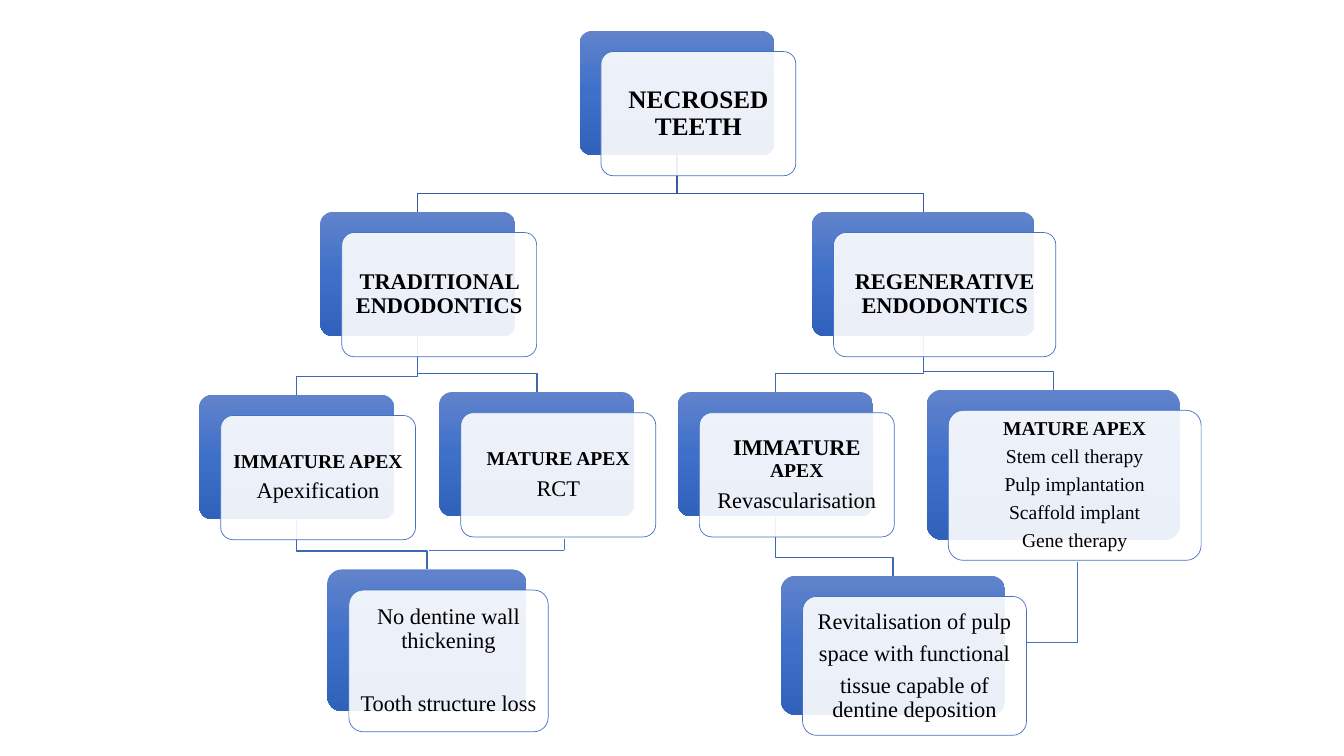
from copy import deepcopy

from lxml import etree
from pptx import Presentation
from pptx import util as u
from pptx.dml import color
from pptx.enum import shapes, text
from pptx.oxml import ns

COLOURS = {
    "top": "6183CB", "middle": "3E70CA", "bottom": "3062BB",
    "card": "FFFFFF", "outline": "4472C4", "ink": "000000",
    "root_link": "365B9D", "link": "3E67B2",
}
FONT = "Times New Roman"
SHIFT_X, SHIFT_Y = 0.54, 0.52  # front card relative to its backing, cm
BEND = 0.46                    # height of a link's last segment, cm

# Each node: left, top, width, height in cm, then paragraphs.
# Each paragraph: bold, space before in pt, runs of (wording, size).
NODES = {
    "necrosed": (14.6, 0.78, 4.91, 3.13, [(True, 0, [("NECROSED TEETH", 18)])]),
    "traditional": (8.07, 5.34, 4.91, 3.13, [(True, 0, [("TRADITIONAL ENDODONTICS", 16)])]),
    "apexification": (5.02, 9.95, 4.91, 3.13, [
        (True, 0, [("IMMATURE APEX", 14)]),
        (False, 0, [("Apexification", 16)])]),
    "drawbacks": (8.25, 14.35, 5.02, 3.57, [
        (False, 0, [("No dentine wall thickening", 16)]),
        (False, 22.5, [("Tooth structure loss", 16)])]),
    "rct": (11.07, 9.88, 4.91, 3.13, [
        (True, 0, [("MATURE APEX", 14)]),
        (False, 0, [("RCT", 16)])]),
    "regenerative": (20.46, 5.34, 5.6, 3.13, [(True, 0, [("REGENERATIVE ENDODONTICS", 16)])]),
    "revascularisation": (17.08, 9.88, 4.91, 3.13, [
        (True, 0, [("IMMATURE ", 16), ("APEX", 14)]),
        (False, 0, [("Revascularisation", 16)])]),
    "revitalisation": (19.68, 14.51, 5.64, 3.5, [
        (False, 0, [("Revitalisation of pulp", 16)]),
        (False, 0, [("space with functional", 16)]),
        (False, 0, [("tissue capable of dentine deposition", 16)])]),
    "therapies": (23.35, 9.82, 6.37, 3.78, [
        (True, 0, [("MATURE APEX", 14)]),
        (False, 0, [("Stem cell therapy", 14)]),
        (False, 0, [("Pulp implantation", 14)]),
        (False, 0, [("Scaffold implant", 14)]),
        (False, 0, [("Gene therapy", 14)])]),
}
LINKS = [
    ("regenerative", "therapies"), ("revascularisation", "revitalisation"),
    ("regenerative", "revascularisation"), ("necrosed", "regenerative"),
    ("traditional", "rct"), ("apexification", "drawbacks"),
    ("traditional", "apexification"), ("necrosed", "traditional"),
]
SIDE_LINES = [
    (10.8, 13.87, 14.22, 13.87), (14.22, 13.87, 14.22, 13.59),
    (27.15, 14.17, 27.15, 16.18), (25.88, 16.18, 27.15, 16.18),
]


def rgb(name):
    return color.RGBColor.from_string(COLOURS[name])


def add_card(left, top, width, height):
    card = page.shapes.add_shape(shapes.MSO_SHAPE.ROUNDED_RECTANGLE,
                                 u.Cm(left), u.Cm(top), u.Cm(width), u.Cm(height))
    card.adjustments[0] = 0.1
    card.shadow.inherit = False
    return card


deck = Presentation()
deck.slide_width, deck.slide_height = u.Inches(13.33), u.Inches(7.5)
page = deck.slides.add_slide(deck.slide_layouts[6])

# Links of the tree, behind the cards
for parent, child in LINKS:
    left, top, width, height, _ = NODES[parent]
    start_x, start_y = left + width / 2, top + height
    left, top, width, height, _ = NODES[child]
    end_x, end_y = left + width / 2, top
    corners = [(start_x, end_y - BEND), (end_x, end_y - BEND), (end_x, end_y)]
    builder = page.shapes.build_freeform(u.Cm(start_x), u.Cm(start_y))
    builder.add_line_segments([(u.Cm(x), u.Cm(y)) for x, y in corners], close=False)
    link = builder.convert_to_shape()
    link.shadow.inherit = False
    link.fill.background()
    link.line.color.rgb = rgb("root_link" if parent == "necrosed" else "link")
    link.line.width = u.Pt(1)

# Nodes: a gradient backing and a translucent card with the wording
for left, top, width, height, paragraphs in NODES.values():
    backing = add_card(left, top, width, height)
    backing.line.fill.background()
    backing.fill.gradient()
    backing.fill.gradient_angle = 270
    first, last = backing.fill.gradient_stops
    first.position, last.position = 0, 1
    first.color.rgb, last.color.rgb = rgb("top"), rgb("bottom")
    stops = backing.element.spPr.find(".//" + ns.qn("a:gsLst"))
    middle = deepcopy(stops[0])
    middle.set("pos", "50000")
    middle[0].set("val", COLOURS["middle"])
    stops.insert(1, middle)

    box = add_card(left + SHIFT_X, top + SHIFT_Y, width, height)
    box.fill.solid()
    box.fill.fore_color.rgb = rgb("card")
    tint = box.element.spPr.find(ns.qn("a:solidFill"))[0]
    etree.SubElement(tint, ns.qn("a:alpha"), val="90000")
    box.line.color.rgb = rgb("outline")
    box.line.width = u.Pt(0.5)

    frame = box.text_frame
    frame.word_wrap = True
    frame.vertical_anchor = text.MSO_ANCHOR.MIDDLE
    frame.margin_left = frame.margin_right = u.Cm(0.15)
    frame.margin_top = frame.margin_bottom = u.Cm(0.15)
    for index, (bold, before, runs) in enumerate(paragraphs):
        para = frame.add_paragraph() if index else frame.paragraphs[0]
        para.alignment = text.PP_ALIGN.CENTER
        para.line_spacing = 0.9
        para.space_before = u.Pt(before)
        para.space_after = u.Pt(0.35 * runs[0][1])
        para.font.name = FONT
        para.font.bold = bold
        para.font.color.rgb = rgb("ink")
        para.font.size = u.Pt(runs[0][1])
        for wording, size in runs:
            span = para.add_run()
            span.text = wording
            if size != runs[0][1]:
                span.font.size = u.Pt(size)

# Thin lines that join the mature-apex branches to the outcomes
for from_x, from_y, to_x, to_y in SIDE_LINES:
    line = page.shapes.add_connector(shapes.MSO_CONNECTOR.STRAIGHT, u.Cm(from_x),
                                     u.Cm(from_y), u.Cm(to_x), u.Cm(to_y))
    line.line.color.rgb = rgb("outline")
    line.line.width = u.Pt(0.5)
    etree.SubElement(line.element.spPr, ns.qn("a:effectLst"))

deck.save("out.pptx")
